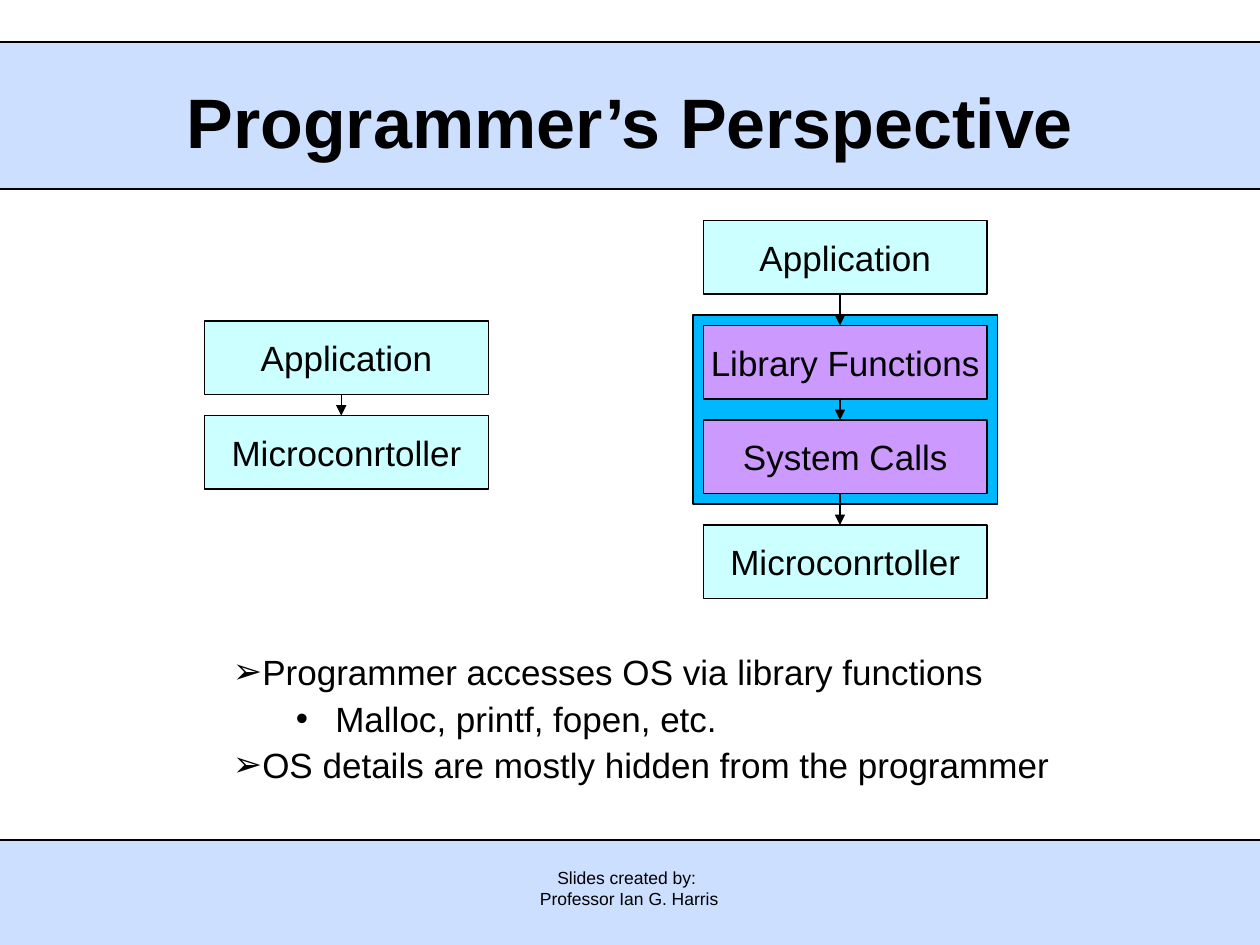
from dataclasses import dataclass

from lxml import etree
from pptx import Presentation
from pptx.dml.color import RGBColor
from pptx.enum.shapes import MSO_CONNECTOR, MSO_SHAPE
from pptx.enum.text import MSO_ANCHOR, PP_ALIGN
from pptx.oxml.ns import qn
from pptx.util import Pt

RECT = MSO_SHAPE.RECTANGLE
LINE = MSO_CONNECTOR.STRAIGHT
MID, TOP = MSO_ANCHOR.MIDDLE, MSO_ANCHOR.TOP
MIDDLE, LEFT = PP_ALIGN.CENTER, PP_ALIGN.LEFT

COLORS = {
    "band": "CDDFFF",
    "ink": "000000",
    "plain": "CCFFFF",
    "call": "CC99FF",
    "system": "00B8FF",
}
WIDE, HIGH = 720, 540
BOX_W, BOX_H = 162, 42
SHAFT = 78  # arrow distance from the left side of a box


@dataclass
class Area:
    left: float
    top: float
    width: float
    height: float

    def points(self) -> list:
        return [Pt(v) for v in (self.left, self.top, self.width, self.height)]


@dataclass
class Box:
    text: str
    top: float
    color: str = "plain"


@dataclass
class Stack:
    left: float
    boxes: list[Box]
    frame: Area | None = None


@dataclass
class Point:
    text: str
    mark: str
    margin: float = 0
    indent: float = 0
    level: int = 0


def tint(name: str) -> RGBColor:
    return RGBColor.from_string(COLORS[name])


def write(para, text: str, size: float, bold: bool = False) -> None:
    run = para.add_run()
    run.text = text
    style = {"name": "Arial", "size": Pt(size), "bold": bold}
    for key, value in style.items():
        setattr(run.font, key, value)
    run.font.color.rgb = tint("ink")


def add_rect(shapes, area: Area, color: str, edge: str = "ink"):
    shape = shapes.add_shape(RECT, *area.points())
    shape.shadow.inherit = False
    shape.fill.solid()
    shape.fill.fore_color.rgb = tint(color)
    shape.line.color.rgb = tint(edge)
    shape.line.width = Pt(0.75)
    return shape


def add_line(shapes, x: float, y: float, x2: float, y2: float,
             arrow: bool = False) -> None:
    line = shapes.add_connector(LINE, Pt(x), Pt(y), Pt(x2), Pt(y2))
    line.line.color.rgb = tint("ink")
    line.line.width = Pt(0.75)
    if arrow:
        end = etree.SubElement(line.line._get_or_add_ln(), qn("a:tailEnd"))
        end.set("type", "triangle")
    etree.SubElement(line._element.spPr, qn("a:effectLst"))


def add_text(shapes, area: Area, lines: list[str], size: float,
             anchor=TOP, bold: bool = False) -> None:
    """Add a text box of centred lines."""
    frame = shapes.add_textbox(*area.points()).text_frame
    frame.word_wrap = True
    frame.vertical_anchor = anchor
    for i, text in enumerate(lines):
        para = frame.add_paragraph() if i else frame.paragraphs[0]
        para.alignment = MIDDLE
        write(para, text, size, bold)


def add_points(shapes, area: Area, points: list[Point]) -> None:
    frame = shapes.add_textbox(*area.points()).text_frame
    frame.word_wrap = True
    for i, point in enumerate(points):
        para = frame.add_paragraph() if i else frame.paragraphs[0]
        props = para._p.get_or_add_pPr()
        props.set("marL", str(Pt(point.margin)))
        props.set("indent", str(Pt(point.indent)))
        etree.SubElement(props, qn("a:buFont")).set("typeface", "Arial")
        etree.SubElement(props, qn("a:buChar")).set("char", point.mark)
        form = {"level": point.level, "alignment": LEFT, "line_spacing": 1.1}
        for key, value in form.items():
            setattr(para, key, value)
        write(para, point.text, 20)


def add_stack(shapes, stack: Stack) -> None:
    """Draw a group of boxes, each with an arrow to the next one down."""
    group = shapes.add_group_shape().shapes
    if stack.frame:
        add_rect(group, stack.frame, "system")
    for box in stack.boxes:
        area = Area(stack.left, box.top, BOX_W, BOX_H)
        frame = add_rect(group, area, box.color).text_frame
        frame.word_wrap = False
        frame.vertical_anchor = MID
        para = frame.paragraphs[0]
        para.alignment = MIDDLE
        write(para, box.text, 20)
    x = stack.left + SHAFT
    for upper, lower in zip(stack.boxes, stack.boxes[1:]):
        add_line(group, x, upper.top + BOX_H, x, lower.top, arrow=True)


BANDS = [Area(0, 480, WIDE, 60), Area(0, 24, WIDE, 84)]
RULES = [24, 108, 480]
STACKS = [
    Stack(117, [Box("Application", 183.5), Box("Microconrtoller", 237.5)]),
    Stack(402, [
        Box("Application", 126),
        Box("Library Functions", 186, "call"),
        Box("System Calls", 240, "call"),
        Box("Microconrtoller", 300),
    ], Area(396, 180, 174, 108)),
]
POINTS = [
    Point("Programmer accesses OS via library functions", "➢"),
    Point("Malloc, printf, fopen, etc.", "•", 58.5, -22.5, 1),
    Point("OS details are mostly hidden from the programmer", "➢"),
]


def main() -> None:
    deck = Presentation()
    deck.slide_width, deck.slide_height = Pt(WIDE), Pt(HIGH)
    shapes = deck.slides.add_slide(deck.slide_layouts[6]).shapes

    for band in BANDS:
        add_rect(shapes, band, "band", "band")
    for y in RULES:
        add_line(shapes, 0, y, WIDE, y)
    add_text(shapes, Area(246, 492, 227, 35),
             ["Slides created by: ", "Professor Ian G. Harris"], 10)
    add_text(shapes, Area(54, 24, 612, 90), ["Programmer’s Perspective"],
             40, MID, True)
    add_points(shapes, Area(126, 366, 516, 86.5), POINTS)
    for stack in STACKS:
        add_stack(shapes, stack)

    deck.save("out.pptx")


if __name__ == "__main__":
    main()
